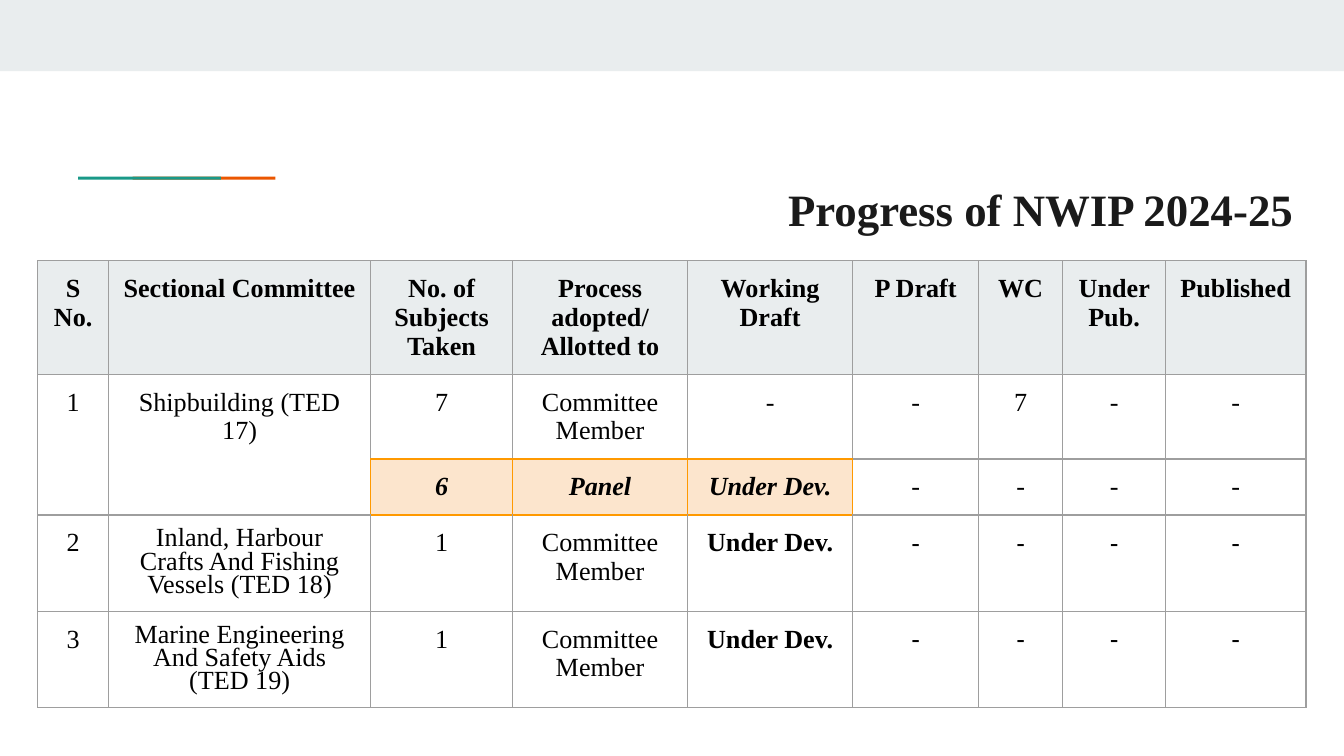
from dataclasses import dataclass

from lxml import etree
from pptx import Presentation
from pptx.dml.color import RGBColor
from pptx.enum.shapes import MSO_SHAPE
from pptx.enum.text import MSO_ANCHOR, MSO_AUTO_SIZE, PP_ALIGN
from pptx.oxml.ns import qn
from pptx.util import Pt

RECTANGLE = MSO_SHAPE.RECTANGLE
TOP = MSO_ANCHOR.TOP
NO_AUTOFIT = MSO_AUTO_SIZE.NONE
CENTER, RIGHT = PP_ALIGN.CENTER, PP_ALIGN.RIGHT


@dataclass(frozen=True)
class Theme:
    band: str = "E9EDEE"
    teal: str = "1A9988"
    orange: str = "EB5600"
    title: str = "1A1A1A"
    body: str = "000000"
    cell: str = "FFFFFF"
    grid: str = "9E9E9E"
    highlight: str = "FCE5CD"
    highlight_grid: str = "FF9900"
    font: str = "Times New Roman"
    dash_font: str = "Arial"
    title_size: float = 24
    body_size: float = 14
    border: float = 0.75
    inset: float = 7.2


HEADERS = ["S No.", "Sectional Committee", "No. of Subjects Taken",
           "Process adopted/ Allotted to", "Working Draft", "P Draft", "WC",
           "Under Pub.", "Published"]
PROGRESS = [
    ["1", "Shipbuilding (TED 17)", "7", "Committee Member", "-", "-", "7", "-", "-"],
    ["", "", "6", "Panel", "Under Dev.", "-", "-", "-", "-"],
    ["2", "Inland, Harbour Crafts And Fishing Vessels (TED 18)", "1",
     "Committee Member", "Under Dev.", "-", "-", "-", "-"],
    ["3", "Marine Engineering And Safety Aids (TED 19)", "1",
     "Committee\nMember", "Under Dev.", "-", "-", "-", "-"],
]
COLUMN_WIDTHS = [38, 140.4, 76, 93.8, 88.4, 67.5, 45, 55.2, 75.2]
ROW_HEIGHTS = [60.6, 45.3, 30, 51.4, 51.4]
PANEL_CELLS = {(2, column) for column in (2, 3, 4)}
MERGED_COLUMNS = (0, 1)
FIRST_TIGHT_ROW = 3
SIDES = {"a:lnL": (0, -1), "a:lnR": (0, 1), "a:lnT": (-1, 0), "a:lnB": (1, 0)}


class SlideBuilder:
    """Draws styled elements on the current slide."""

    def __init__(self, slide, theme):
        self.slide = slide
        self.theme = theme

    def style_text(self, frame, text, size, color, align, font,
                   bold=False, italic=False, spacing=1.0):
        frame.word_wrap = True
        frame.text = text
        for paragraph in frame.paragraphs:
            paragraph.alignment = align
            paragraph.line_spacing = spacing
            for run in paragraph.runs:
                run.font.name = font
                run.font.size = Pt(size)
                run.font.bold = bold
                run.font.italic = italic
                run.font.color.rgb = RGBColor.from_string(color)

    def set_insets(self, holder):
        inset = Pt(self.theme.inset)
        holder.margin_left = holder.margin_right = inset
        holder.margin_top = holder.margin_bottom = inset

    def bar(self, left, top, width, height, color):
        bar = self.slide.shapes.add_shape(RECTANGLE, Pt(left), Pt(top), Pt(width), Pt(height))
        bar.shadow.inherit = False
        bar.fill.solid()
        bar.fill.fore_color.rgb = RGBColor.from_string(color)
        bar.line.fill.background()

    def title(self, text, left, top, width, height):
        title = self.slide.shapes.title
        title.left, title.top = Pt(left), Pt(top)
        title.width, title.height = Pt(width), Pt(height)
        frame = title.text_frame
        frame.auto_size = NO_AUTOFIT
        frame.vertical_anchor = TOP
        self.set_insets(frame)
        self.style_text(frame, text, self.theme.title_size, self.theme.title, RIGHT,
                        self.theme.font, bold=True)

    def borders(self, cell, row, column):
        properties = cell._tc.get_or_add_tcPr()
        for index, (side, (down, across)) in enumerate(SIDES.items()):
            touches_panel = PANEL_CELLS & {(row, column), (row + down, column + across)}
            color = self.theme.highlight_grid if touches_panel else self.theme.grid
            line = etree.Element(qn(side), w=str(Pt(self.theme.border)))
            fill = etree.SubElement(line, qn("a:solidFill"))
            etree.SubElement(fill, qn("a:srgbClr"), val=color)
            properties.insert(index, line)

    def cell(self, cell, text, row, column):
        theme = self.theme
        header, panel = row == 0, (row, column) in PANEL_CELLS
        tight = row >= FIRST_TIGHT_ROW
        fill = theme.band if header else theme.highlight if panel else theme.cell
        cell.fill.solid()
        cell.fill.fore_color.rgb = RGBColor.from_string(fill)
        cell.vertical_anchor = TOP
        self.set_insets(cell)
        self.style_text(cell.text_frame, text, theme.body_size, theme.body, CENTER,
                        theme.dash_font if tight and text == "-" else theme.font,
                        bold=header or panel or text == "Under Dev.", italic=panel,
                        spacing=0.8 if tight and column == 1 else 1.0)
        self.borders(cell, row, column)

    def table(self, rows, left, top):
        frame = self.slide.shapes.add_table(
            len(rows), len(COLUMN_WIDTHS), Pt(left), Pt(top),
            Pt(sum(COLUMN_WIDTHS)), Pt(sum(ROW_HEIGHTS)))
        table = frame.table
        table.first_row = table.horz_banding = False
        for column, width in zip(table.columns, COLUMN_WIDTHS):
            column.width = Pt(width)
        for row, height in zip(table.rows, ROW_HEIGHTS):
            row.height = Pt(height)
        for row, texts in enumerate(rows):
            for column, text in enumerate(texts):
                self.cell(table.cell(row, column), text, row, column)
        for column in MERGED_COLUMNS:
            table.cell(1, column).merge(table.cell(2, column))


def main():
    presentation = Presentation()
    presentation.slide_width, presentation.slide_height = Pt(720), Pt(405)
    theme = Theme()
    builder = SlideBuilder(
        presentation.slides.add_slide(presentation.slide_layouts[5]), theme)
    builder.bar(0, 0, 720, 38.2, theme.band)
    builder.bar(71, 94.7, 76.5, 1.6, theme.orange)
    builder.bar(41.8, 94.7, 76.5, 1.6, theme.teal)
    builder.title("Progress of NWIP 2024-25", 94.3, 90, 605.5, 42.5)
    builder.table([HEADERS, *PROGRESS], 20.2, 139.7)
    presentation.save("out.pptx")


if __name__ == "__main__":
    main()
